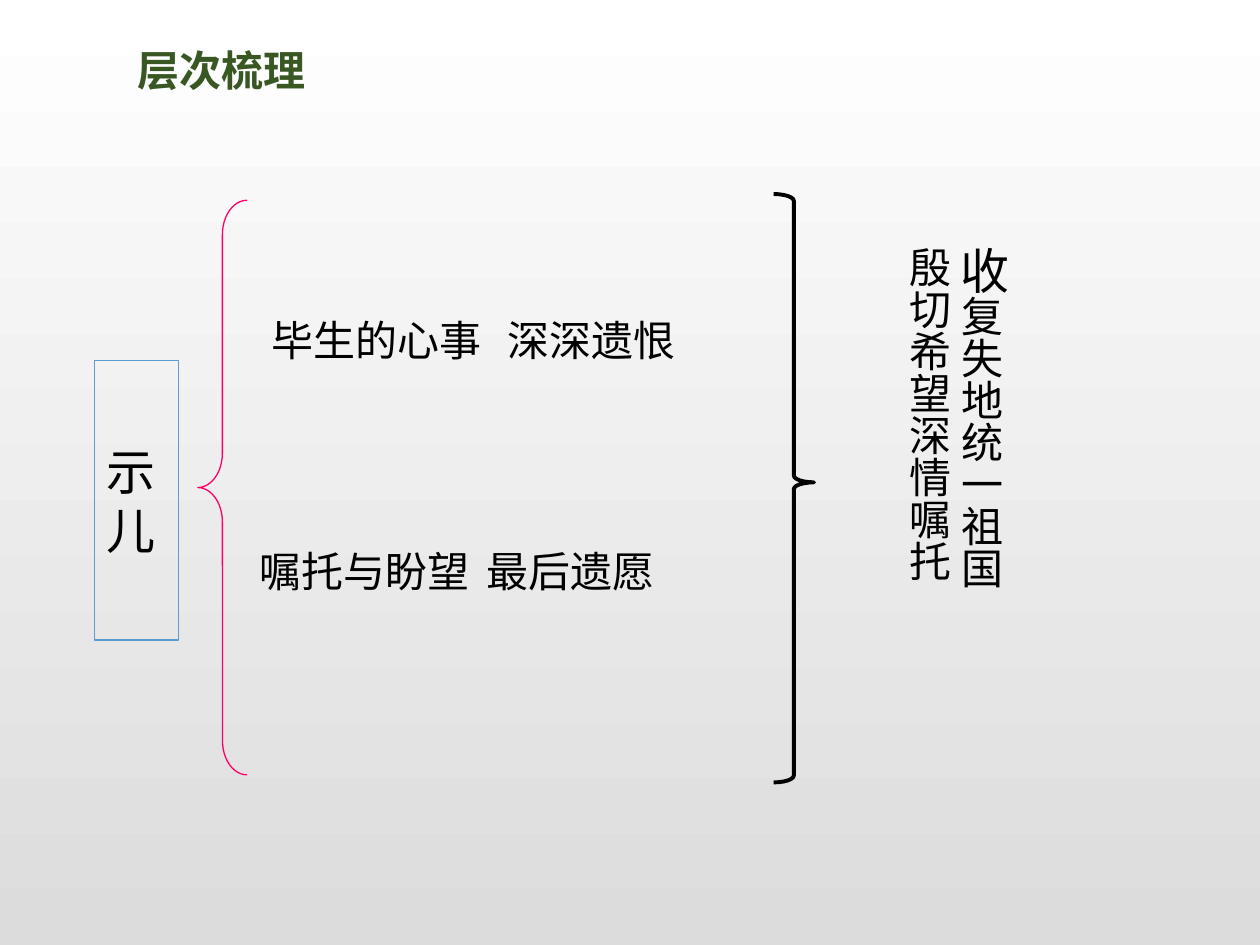
from dataclasses import dataclass

from pptx import Presentation
from pptx.dml.color import RGBColor
from pptx.enum import shapes, text
from pptx.oxml.ns import qn
from pptx.util import Inches, Pt


@dataclass(frozen=True)
class Theme:
    font: str = "Noto Sans CJK SC"
    title: str = "385723"
    ink: str = "000000"
    frame: str = "5B9BD5"
    accent: str = "FF0066"
    backdrop: tuple = ("FFFFFF", "DCDCDC")
    body_size: int = 24
    large_size: int = 28


def colour(value):
    return RGBColor.from_string(value)


def apply(target, values):
    for name, value in values.items():
        setattr(target, name, value)


def place(shape, left, top, width, height):
    apply(shape, {"left": Inches(left), "top": Inches(top),
                  "width": Inches(width), "height": Inches(height)})


class SlideBuilder:
    def __init__(self, slide, theme):
        self.slide = slide
        self.theme = theme

    def background(self):
        fill = self.slide.background.fill
        fill.gradient()
        fill.gradient_angle = 270
        for stop, value in zip(fill.gradient_stops, self.theme.backdrop):
            stop.color.rgb = colour(value)

    def frame_format(self, frame, **values):
        defaults = {"word_wrap": True, "auto_size": text.MSO_AUTO_SIZE.NONE,
                    "vertical_anchor": text.MSO_ANCHOR.TOP,
                    "margin_left": Inches(0.1), "margin_right": Inches(0.1),
                    "margin_top": Inches(0.05), "margin_bottom": Inches(0.05)}
        apply(frame, defaults | values)

    def add_span(self, para, wording, size=None, ink=None, bold=False):
        span = para.add_run()
        span.text = wording
        apply(span.font, {"name": self.theme.font, "bold": bold,
                          "size": Pt(size or self.theme.body_size)})
        span.font.color.rgb = colour(ink or self.theme.ink)
        east_asian = span.font._element.makeelement(
            qn("a:ea"), {"typeface": self.theme.font})
        span.font._element.find(qn("a:latin")).addnext(east_asian)

    def title(self, wording, *bounds):
        box = self.slide.shapes.title
        place(box, *bounds)
        self.frame_format(box.text_frame, word_wrap=False,
                          margin_left=Inches(0.07), margin_right=Inches(0.07),
                          margin_top=Inches(0.04), margin_bottom=Inches(0.04))
        para = box.text_frame.paragraphs[0]
        para.alignment = text.PP_ALIGN.CENTER
        self.add_span(para, wording, ink=self.theme.title, bold=True)

    def outline(self, kind, bounds, ink, weight, adjustments=()):
        """Add an unfilled preset shape."""
        shape = self.slide.shapes.add_shape(kind, *map(Inches, bounds))
        shape.shadow.inherit = False
        shape.fill.background()
        shape.line.color.rgb = colour(ink)
        shape.line.width = Pt(weight)
        for index, value in enumerate(adjustments):
            shape.adjustments[index] = value
        return shape

    def topic(self, wording, *bounds):
        box = self.outline(shapes.MSO_SHAPE.RECTANGLE, bounds, self.theme.frame, 0.75)
        self.frame_format(box.text_frame, vertical_anchor=text.MSO_ANCHOR.MIDDLE)
        para = box.text_frame.paragraphs[0]
        para.alignment = text.PP_ALIGN.LEFT
        self.add_span(para, wording, self.theme.large_size)

    def text_box(self, bounds):
        box = self.slide.shapes.add_textbox(*map(Inches, bounds))
        self.frame_format(box.text_frame)
        return box.text_frame

    def phrase_pair(self, first, second, tab, *bounds):
        """Set two phrases on one line, the second at a tab stop."""
        para = self.text_box(bounds).paragraphs[0]
        properties = para._p.get_or_add_pPr()
        stops = properties.makeelement(qn("a:tabLst"), {})
        stops.append(stops.makeelement(
            qn("a:tab"), {"pos": str(Inches(tab)), "algn": "l"}))
        properties.append(stops)
        self.add_span(para, f"{first}\t{second}")

    def vertical_columns(self, columns, *bounds):
        """Set columns of (wording, size) spans from right to left."""
        frame = self.text_box(bounds)
        frame._txBody.bodyPr.set("vert", "eaVert")
        for index, spans in enumerate(columns):
            para = frame.add_paragraph() if index else frame.paragraphs[0]
            for wording, size in spans:
                self.add_span(para, wording, size)


def main():
    deck = Presentation()
    deck.slide_width, deck.slide_height = Inches(10), Inches(7.5)
    theme = Theme()
    page = SlideBuilder(deck.slides.add_slide(deck.slide_layouts[5]), theme)
    page.background()
    page.title("层次梳理", 1.01, 0.31, 1.5, 0.48)
    page.outline(shapes.MSO_SHAPE.LEFT_BRACE, (1.57, 1.59, 0.39, 4.56),
                 theme.accent, 0.75, (0.7, 0.5))
    page.topic("示儿", 0.75, 2.86, 0.67, 2.22)
    page.outline(shapes.MSO_SHAPE.RIGHT_BRACE, (6.14, 1.54, 0.32, 4.67),
                 theme.ink, 2.25, (0.17, 0.49))
    page.phrase_pair("毕生的心事", "深深遗恨", 1.87, 2.06, 2.45, 3.53, 0.5)
    page.phrase_pair("嘱托与盼望", "最后遗愿", 1.8, 1.96, 4.28, 5.28, 0.5)
    page.vertical_columns(
        [[("收", theme.large_size), ("复失地统一祖国", theme.body_size)],
         [("殷切希望深情嘱托", theme.body_size)]],
        7.01, 1.86, 1.08, 5.98)
    deck.save("out.pptx")


if __name__ == "__main__":
    main()
